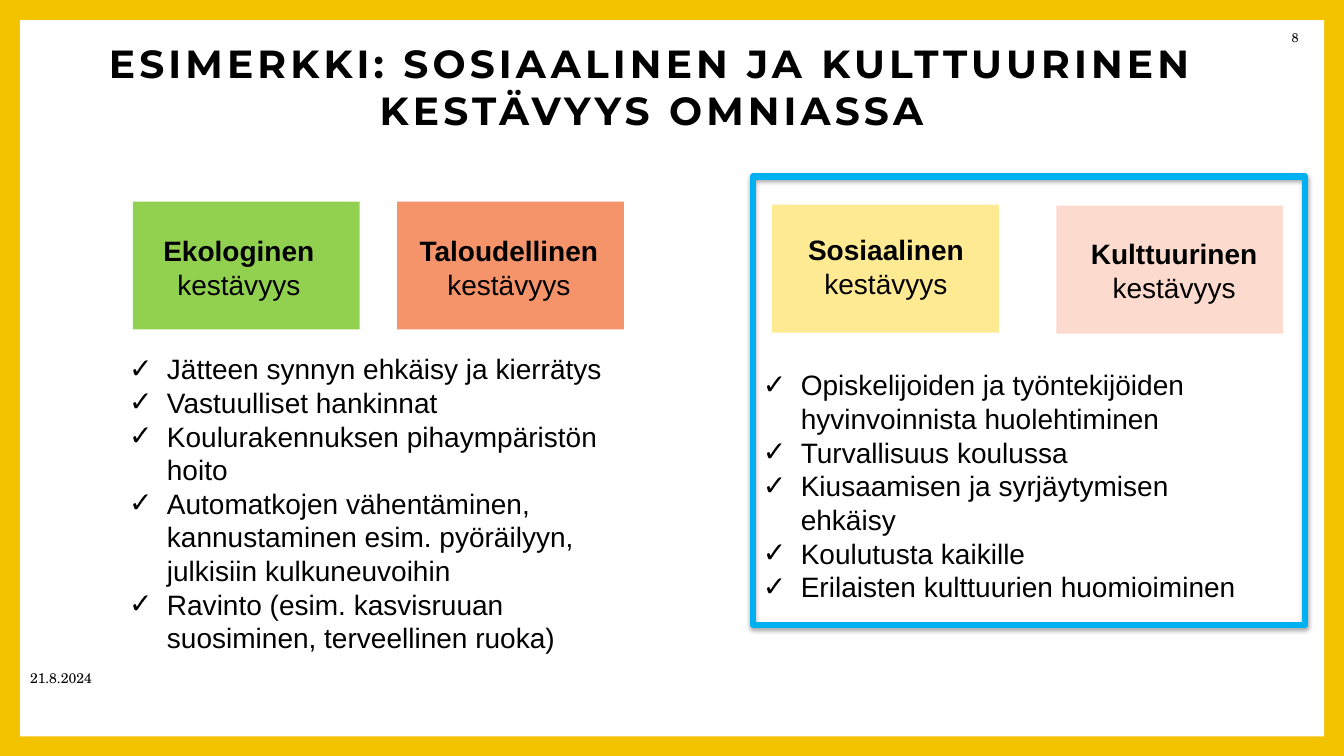
"""Builds a slide on social and cultural sustainability at a school."""
from lxml.etree import SubElement
from pptx import Presentation
from pptx.dml.color import RGBColor
from pptx.enum.shapes import MSO_SHAPE as SHAPE
from pptx.enum.text import MSO_ANCHOR as ANCHOR, MSO_AUTO_SIZE as AUTO, PP_ALIGN as ALIGN
from pptx.oxml import parse_xml
from pptx.oxml.ns import nsdecls, qn
from pptx.util import Pt

CARDS = [
    ("Ekologinen", "92D050", (95, 144), (89.3, 163.4)),
    ("Taloudellinen", "F5936B", (283.7, 144), (282.2, 163.4)),
    ("Sosiaalinen", "FFEA94", (551.5, 146.2), (551.5, 162.7)),
    ("Kulttuurinen", "FCDBCE", (754.6, 146.9), (757.4, 165.6)),
]
LISTS = [
    ((85, 247.7, 369.4, 225.4), [
        "Jätteen synnyn ehkäisy ja kierrätys",
        "Vastuulliset hankinnat",
        "Koulurakennuksen pihaympäristön hoito",
        "Automatkojen vähentäminen, kannustaminen esim. pyöräilyyn, julkisiin kulkuneuvoihin",
        "Ravinto (esim. kasvisruuan suosiminen, terveellinen ruoka)",
    ]),
    ((537.8, 259.2, 369.4, 177), [
        "Opiskelijoiden ja työntekijöiden hyvinvoinnista huolehtiminen",
        "Turvallisuus koulussa",
        "Kiusaamisen ja syrjäytymisen ehkäisy",
        "Koulutusta kaikille",
        "Erilaisten kulttuurien huomioiminen",
    ]),
]


def rgb(value):
    return RGBColor.from_string(value)


class SlideBuilder:
    body = {"name": "Arial", "size": Pt(20), "bold": False}
    strong = {**body, "bold": True}
    heading = {"name": "Montserrat", "size": Pt(28), "bold": True}
    page = {"name": "TeX Gyre Schola", "size": Pt(9), "bold": False}
    date = {**page, "size": Pt(10)}

    def __init__(self, slide):
        self.slide = slide

    def place(self, sp, box):
        for name, value in zip(("left", "top", "width", "height"), box):
            setattr(sp, name, Pt(value))

    def frame(self, sp, anchor=ANCHOR.TOP):
        tf = sp.text_frame
        values = {"word_wrap": True, "auto_size": AUTO.NONE, "vertical_anchor": anchor}
        for name, value in values.items():
            setattr(tf, name, value)
        return tf

    def run(self, p, text, style):
        r = p.add_run()
        r.text = text
        for name, value in style.items():
            setattr(r.font, name, value)
        r.font.color.rgb = rgb("000000")
        return r

    def rect(self, box, fill):
        sp = self.slide.shapes.add_shape(SHAPE.RECTANGLE, *map(Pt, box))
        sp.shadow.inherit = False
        sp.fill.solid()
        sp.fill.fore_color.rgb = rgb(fill)
        sp.line.fill.background()
        return sp

    def outline(self, box, color, width):
        sp = self.rect(box, "FFFFFF")
        sp.fill.background()
        sp.line.color.rgb = rgb(color)
        sp.line.width = Pt(width)
        props = sp.element.spPr
        SubElement(props.find(qn("a:ln")), qn("a:round"))
        props.find(qn("a:effectLst")).append(parse_xml(
            f'<a:outerShdw {nsdecls("a")} blurRad="{Pt(3.1)}" dist="{Pt(1.8)}" '
            'dir="5400000" rotWithShape="0"><a:srgbClr val="000000">'
            '<a:alpha val="35000"/></a:srgbClr></a:outerShdw>'))

    def text(self, box, runs, align=ALIGN.CENTER, anchor=ANCHOR.TOP):
        sp = self.slide.shapes.add_textbox(*map(Pt, box))
        p = self.frame(sp, anchor).paragraphs[0]
        p.alignment = align
        for text, style in runs:
            self.run(p, text, style)

    def title(self, box, text):
        sp = self.slide.shapes.title
        self.place(sp, box)
        p = self.frame(sp).paragraphs[0]
        p.alignment = ALIGN.CENTER
        r = self.run(p, text, self.heading)
        r.font._element.set("spc", "300")

    def checklist(self, sp, box, items):
        self.place(sp, box)
        tf = self.frame(sp)
        for i, item in enumerate(items):
            p = tf.add_paragraph() if i else tf.paragraphs[0]
            props = p._p.get_or_add_pPr()
            props.set("marL", str(Pt(27)))
            props.set("indent", str(Pt(-27)))
            SubElement(props, qn("a:buFont"), typeface="Arial")
            SubElement(props, qn("a:buChar"), char="✓")
            p.space_before = Pt(0)
            self.run(p, item, self.body)


def main():
    prs = Presentation()
    prs.slide_width, prs.slide_height = Pt(960), Pt(540)
    slide = prs.slides.add_slide(prs.slide_layouts[3])
    bodies = list(slide.placeholders)[1:]
    s = SlideBuilder(slide)

    s.rect((0, 0, 960, 540), "F3C300")
    s.rect((14.4, 14.4, 931.4, 511.6), "FFFFFF")
    for sp in slide.placeholders:
        slide.shapes._spTree.append(sp.element)

    s.title((23, 24.5, 885, 72.7), "ESIMERKKI: SOSIAALINEN JA KULTTUURINEN KESTÄVYYS OMNIASSA")
    for sp, (box, items) in zip(bodies, LISTS):
        s.checklist(sp, box, items)
    for name, fill, card, label in CARDS:
        s.rect((*card, 162, 91.4), fill)
        s.text((*label, 162.7, 55.4), [(name, s.strong), (" kestävyys", s.body)])
    s.outline((537.8, 126, 394.6, 320.4), "00B0F0", 4.5)

    s.text((905, 14.4, 40.3, 25.2), [("8", s.page)], anchor=ANCHOR.MIDDLE)
    s.text((14.4, 472.3, 113.8, 24.5), [("21.8.2024", s.date)], ALIGN.LEFT, ANCHOR.MIDDLE)
    prs.save("out.pptx")


if __name__ == "__main__":
    main()
